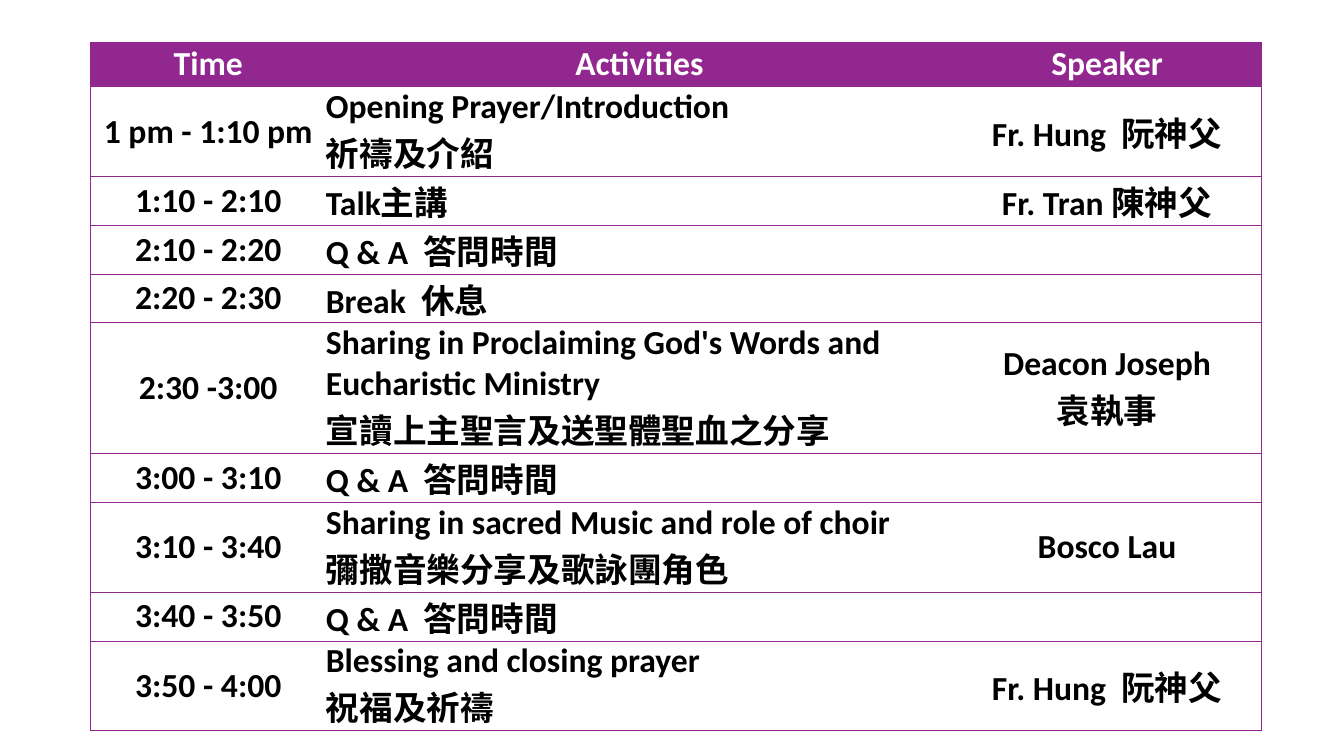
from lxml.etree import SubElement
from pptx import Presentation
from pptx.dml.color import RGBColor
from pptx.enum.text import MSO_ANCHOR, PP_ALIGN
from pptx.oxml.ns import qn
from pptx.util import Inches, Pt

PURPLE = RGBColor(0x92, 0x27, 0x8F)
BLACK = RGBColor(0, 0, 0)
WHITE = RGBColor(0xFF, 0xFF, 0xFF)
NO_GRID_STYLE = "{2D5ABB26-0587-4C30-8999-92F81FD0307C}"

# Percent of the slide's width and height
TABLE_LEFT, TABLE_TOP = 6.75, 5.6
COLUMN_WIDTHS = (17.5, 46.65, 22.95)
HEADER_HEIGHT = 5.87
ROW_HEIGHTS = {1: 6.4, 2: 11.47, 3: 17.07}

HEADERS = ("Time", "Activities", "Speaker")
QUESTIONS = "Q & A  答問時間"
# Lines the activity takes, time, activity, speaker
SCHEDULE = (
    (2, "1 pm - 1:10 pm", "Opening Prayer/Introduction\n祈禱及介紹", "Fr. Hung  阮神父"),
    (1, "1:10 - 2:10", "Talk主講", "Fr. Tran 陳神父"),
    (1, "2:10 - 2:20", QUESTIONS, ""),
    (1, "2:20 - 2:30", "Break  休息", ""),
    (3, "2:30 -3:00",
     "Sharing in Proclaiming God's Words and Eucharistic Ministry\n宣讀上主聖言及送聖體聖血之分享",
     "Deacon Joseph\n袁執事"),
    (1, "3:00 - 3:10", QUESTIONS, ""),
    (2, "3:10 - 3:40", "Sharing in sacred Music and role of choir\n彌撒音樂分享及歌詠團角色",
     "Bosco Lau"),
    (1, "3:40 - 3:50", QUESTIONS, ""),
    (2, "3:50 - 4:00", "Blessing and closing prayer\n祝福及祈禱", "Fr. Hung  阮神父"),
)


def write_text(frame, text, font="Calibri", size=24, color=BLACK, bold=True,
               align=PP_ALIGN.LEFT):
    """Fill the frame's first paragraph, with a line break at each newline."""
    para = frame.paragraphs[0]
    para.alignment = align
    for number, line in enumerate(text.split("\n")):
        if number:
            para.add_line_break()
        span = para.add_run()
        span.text = line
        span.font.name = font
        span.font.size = Pt(size)
        span.font.bold = bold
        span.font.color.rgb = color


class SchedulePage:
    def __init__(self, deck):
        self.deck = deck
        self.page = deck.slides.add_slide(deck.slide_layouts[6])

    def across(self, percent):
        return round(self.deck.slide_width * percent / 100)

    def down(self, percent):
        return round(self.deck.slide_height * percent / 100)

    def add_borders(self, cell, sides, color=PURPLE, width=0.5):
        """Draw the sides named by letters; they must come in the order L, R, T, B."""
        properties = cell._tc.get_or_add_tcPr()
        for side in sides:
            line = SubElement(properties, qn(f"a:ln{side}"), w=str(Pt(width)))
            fill = SubElement(line, qn("a:solidFill"))
            SubElement(fill, qn("a:srgbClr"), val=str(color))

    def add_cell(self, cell, text, sides, header=False, align=PP_ALIGN.CENTER):
        cell.margin_left = cell.margin_right = cell.margin_top = cell.margin_bottom = 0
        cell.vertical_anchor = MSO_ANCHOR.MIDDLE
        self.add_borders(cell, sides)
        if header:
            cell.fill.solid()
            cell.fill.fore_color.rgb = PURPLE
        else:
            cell.fill.background()
        if text:
            write_text(cell.text_frame, text, color=WHITE if header else BLACK, align=align)

    def add_schedule(self, headers, schedule):
        heights = [HEADER_HEIGHT] + [ROW_HEIGHTS[lines] for lines, *_ in schedule]
        rows = [headers] + [texts for _, *texts in schedule]
        table = self.page.shapes.add_table(
            len(rows), len(headers), self.across(TABLE_LEFT), self.down(TABLE_TOP),
            self.across(sum(COLUMN_WIDTHS)), self.down(sum(heights))).table
        table._tbl.tblPr.find(qn("a:tableStyleId")).text = NO_GRID_STYLE
        table.horz_banding = False
        for column, width in zip(table.columns, COLUMN_WIDTHS):
            column.width = self.across(width)
        for row_number, (texts, height) in enumerate(zip(rows, heights)):
            table.rows[row_number].height = self.down(height)
            header = row_number == 0
            for column_number, text in enumerate(texts):
                outer_side = ("L", "", "R")[column_number]
                left_aligned = column_number == 1 and not header
                self.add_cell(table.cell(row_number, column_number), text,
                              outer_side + "TB", header=header,
                              align=PP_ALIGN.LEFT if left_aligned else PP_ALIGN.CENTER)


def main():
    deck = Presentation()
    deck.slide_width, deck.slide_height = Inches(13.33), Inches(7.5)
    SchedulePage(deck).add_schedule(HEADERS, SCHEDULE)
    deck.save("out.pptx")


if __name__ == "__main__":
    main()
